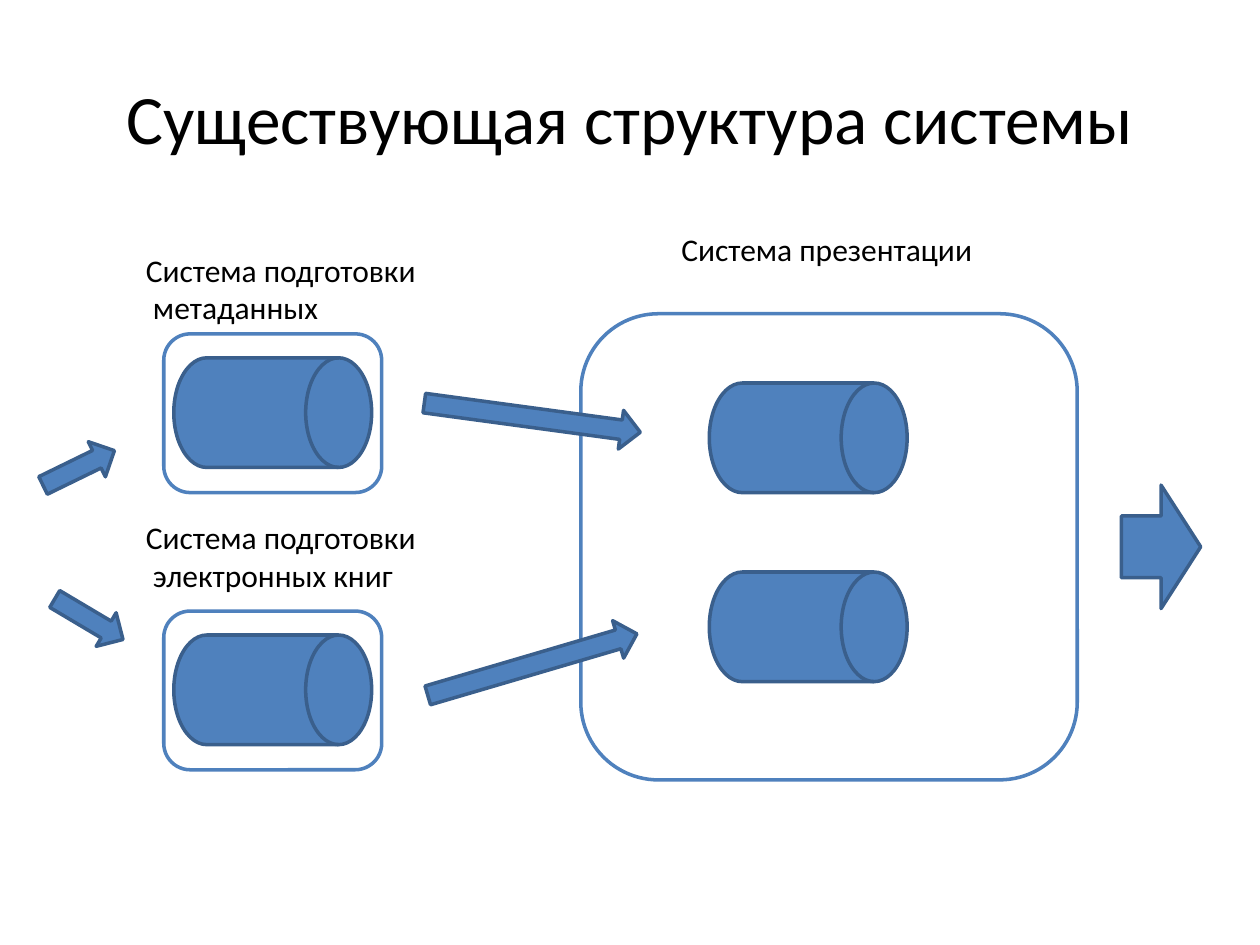
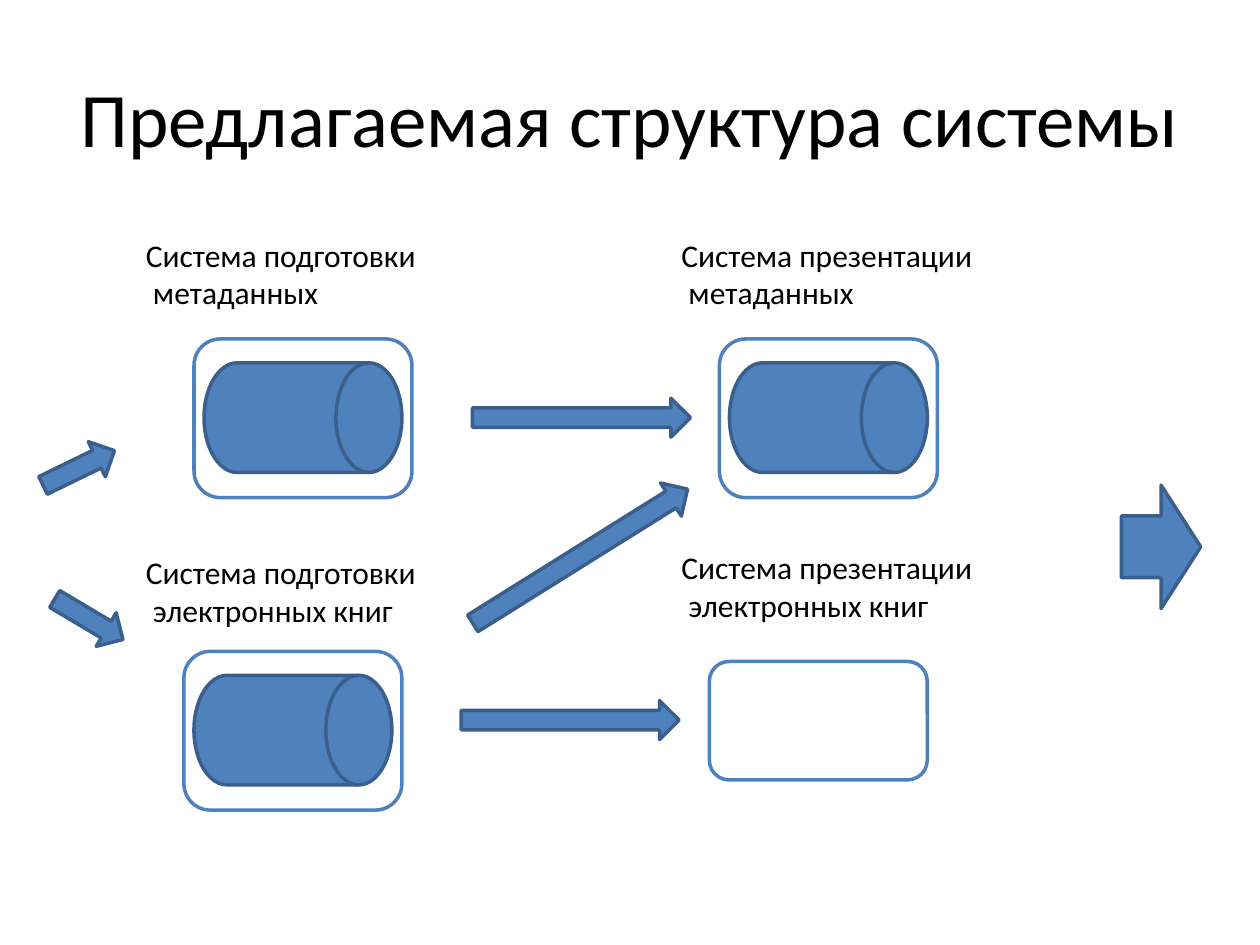
from dataclasses import dataclass

from pptx import Presentation
from pptx.dml.color import RGBColor
from pptx.enum import shapes, text
from pptx.util import Emu, Pt

PX = 9144  # EMU per px, 100 px to the inch
KIND = shapes.MSO_SHAPE


@dataclass(frozen=True)
class Theme:
    font: str = "Calibri"
    ink: str = "000000"
    paper: str = "FFFFFF"
    blue: str = "4F81BD"
    edge: str = "3A5F8C"
    line: int = 2
    label: int = 18
    drum: tuple = (157, 87)
    box: tuple = (173, 126)
    shaft: int = 31


class Deck:
    def __init__(self, theme):
        self.theme = theme
        self.prs = Presentation()
        self.prs.slide_width, self.prs.slide_height = Emu(1000 * PX), Emu(750 * PX)
        self.slide = None

    def page(self, title, size):
        self.slide = self.prs.slides.add_slide(self.prs.slide_layouts[6])
        frame = self.words(50, 30, 900, 125, [title], size)
        frame.word_wrap = True
        frame.vertical_anchor = text.MSO_ANCHOR.MIDDLE
        frame.paragraphs[0].alignment = text.PP_ALIGN.CENTER

    def words(self, x, y, w, h, lines, size):
        """Add a text box, one paragraph a line, and return its text frame."""
        box = self.slide.shapes.add_textbox(*(Emu(n * PX) for n in (x, y, w, h)))
        frame = box.text_frame
        frame.text = "\n".join(lines)
        for para in frame.paragraphs:
            para.font.name = self.theme.font
            para.font.size = Pt(size)
            para.font.color.rgb = RGBColor.from_string(self.theme.ink)
        return frame

    def label(self, x, y, w, *lines):
        """Set unwrapped lines in a box that fits them."""
        frame = self.words(x, y, w, 40 if len(lines) == 1 else 71, lines, self.theme.label)
        frame.word_wrap = False
        frame.auto_size = text.MSO_AUTO_SIZE.SHAPE_TO_FIT_TEXT

    def shape(self, kind, x, y, w, h, fill, line, turn=0):
        item = self.slide.shapes.add_shape(kind, *(Emu(n * PX) for n in (x, y, w, h)))
        item.shadow.inherit = False
        item.fill.solid()
        item.fill.fore_color.rgb = RGBColor.from_string(fill)
        item.line.color.rgb = RGBColor.from_string(line)
        item.line.width = Pt(self.theme.line)
        item.rotation = turn

    def frame(self, x, y, w, h):
        self.shape(KIND.ROUNDED_RECTANGLE, x, y, w, h, self.theme.paper, self.theme.blue)

    def drum(self, x, y):
        self.shape(KIND.FLOWCHART_DIRECT_ACCESS_STORAGE, x, y, *self.theme.drum,
                   self.theme.blue, self.theme.edge)

    def store(self, x, y):
        """Draw a frame with a drum at its centre."""
        (w, h), (dw, dh) = self.theme.box, self.theme.drum
        self.frame(x, y, w, h)
        self.drum(x + (w - dw) // 2, y + (h - dh) // 2)

    def arrow(self, x, y, w, turn=0, h=None):
        self.shape(KIND.RIGHT_ARROW, x, y, w, h or self.theme.shaft,
                   self.theme.blue, self.theme.edge, turn)

    def flow(self):
        """Draw the two inputs and the output that both slides share."""
        self.arrow(31, 356, 63, 334)
        self.arrow(39, 476, 63, 30.7)
        self.arrow(890, 385, 63, h=98)


PREP, SHOW = "Система подготовки", "Система презентации"
META, BOOKS = " метаданных", " электронных книг"
LEFT, RIGHT = (106, 237), (531, 254)  # x and width of the label columns


def label(deck, col, y, *lines):
    x, w = col
    deck.label(x, y, w, *lines)


def current(deck):
    deck.page("Существующая структура системы", 39.6)
    label(deck, LEFT, 194, PREP, META)
    label(deck, LEFT, 406, PREP, BOOKS)
    label(deck, RIGHT, 178, SHOW)
    deck.flow()
    deck.frame(461, 249, 394, 370)
    for y in (304, 454):
        deck.drum(563, y)
    for y in (265, 485):
        deck.store(130, y)
    deck.arrow(336, 316, 173, 7.7)
    deck.arrow(336, 512, 173, 343.6)


def planned(deck):
    deck.page("Предлагаемая структура системы", 44)
    for col, name, low in ((LEFT, PREP, 434), (RIGHT, SHOW, 430)):
        label(deck, col, 182, name, META)
        label(deck, col, low, name, BOOKS)
    deck.flow()
    for x, y in ((154, 269), (571, 269), (146, 517)):
        deck.store(x, y)
    deck.frame(563, 525, 173, 94)
    deck.arrow(375, 316, 173)
    deck.arrow(366, 556, 173)
    deck.arrow(360, 426, 201, 328)


def main():
    deck = Deck(Theme())
    current(deck)
    planned(deck)
    deck.prs.save("out.pptx")


if __name__ == "__main__":
    main()
